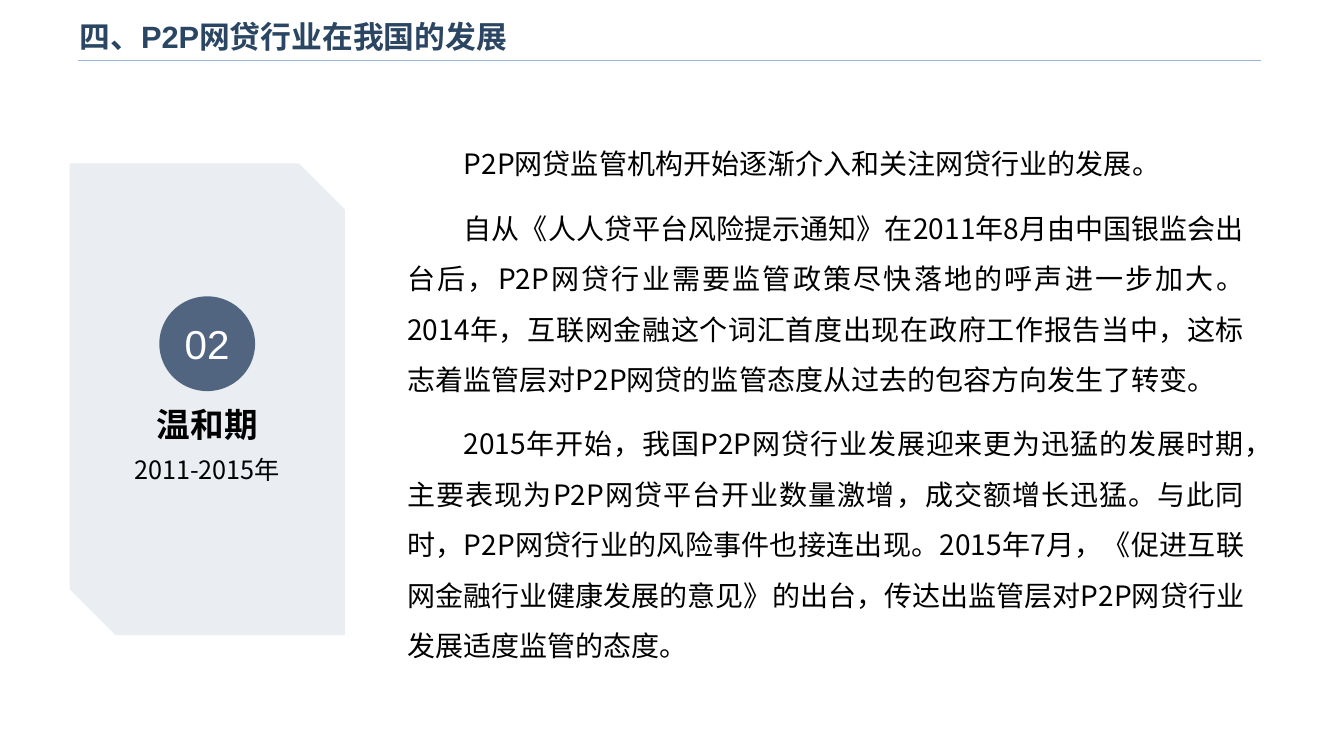
from lxml.etree import SubElement
from pptx import Presentation
from pptx.dml.color import RGBColor
from pptx.enum.lang import MSO_LANGUAGE_ID as Language
from pptx.enum.shapes import MSO_CONNECTOR as Connector, MSO_SHAPE as Shape
from pptx.enum.text import MSO_ANCHOR as Anchor, MSO_AUTO_SIZE as AutoSize, PP_ALIGN as Align
from pptx.oxml.ns import qn
from pptx.util import Inches, Pt

NAVY = RGBColor(0x2B, 0x46, 0x63)
SLATE = RGBColor(0x52, 0x65, 0x80)
RULE_BLUE = RGBColor(0x98, 0xB4, 0xD2)
PALE = RGBColor(0xEA, 0xEE, 0xF2)
BLACK = RGBColor(0, 0, 0)
WHITE = RGBColor(0xFF, 0xFF, 0xFF)
CJK = "Noto Sans CJK SC"


def write(para, text, size, font=CJK, color=BLACK, bold=False, align=Align.CENTER):
    para.alignment = align
    span = para.add_run()
    span.text = text
    span.font.size = Pt(size)
    span.font.name = font
    span.font.bold = bold
    span.font.color.rgb = color
    span.font.language_id = Language.SIMPLIFIED_CHINESE
    SubElement(span.font._element, qn("a:ea")).set("typeface", CJK)


deck = Presentation()
deck.slide_width = Inches(13.33)
deck.slide_height = Inches(7.5)
page = deck.slides.add_slide(deck.slide_layouts[1])

rule = page.shapes.add_connector(Connector.STRAIGHT, Inches(0.77), Inches(0.6), Inches(12.51), Inches(0.6))
rule.line.color.rgb = RULE_BLUE
rule.line.width = Pt(1)
SubElement(rule._element.spPr, qn("a:effectLst"))

title = page.shapes.title
title.left, title.top, title.width, title.height = map(Inches, (0.69, 0.09, 10.71, 0.53))
title.text_frame.auto_size = AutoSize.NONE
title.text_frame.vertical_anchor = Anchor.MIDDLE
write(title.text_frame.paragraphs[0], "四、P2P网贷行业在我国的发展", 22,
      font="Arial", color=NAVY, bold=True, align=Align.LEFT)

card = page.shapes.add_shape(Shape.SNIP_2_DIAG_RECTANGLE, Inches(0.69), Inches(1.62), Inches(2.73), Inches(4.68))
badge = page.shapes.add_shape(Shape.OVAL, Inches(1.58), Inches(2.94), Inches(0.95), Inches(0.94))
for shape, fill in ((card, PALE), (badge, SLATE)):
    shape.shadow.inherit = False
    shape.fill.solid()
    shape.fill.fore_color.rgb = fill
    shape.line.fill.background()
badge.text_frame.vertical_anchor = Anchor.MIDDLE
write(badge.text_frame.paragraphs[0], "02", 28.8, font="Arial", color=WHITE)

for text, top, height, size, bold in (
    ("温和期", 3.96, 0.5, 24, True),
    ("2011-2015年", 4.46, 0.4, 18, False),
):
    box = page.shapes.add_textbox(Inches(0.46), Inches(top), Inches(3.19), Inches(height))
    box.text_frame.word_wrap = True
    write(box.text_frame.paragraphs[0], text, size, bold=bold)

body = page.placeholders[1]
body.left, body.top, body.width, body.height = map(Inches, (3.94, 1.24, 8.5, 5.43))
frame = body.text_frame
frame.auto_size = AutoSize.NONE
frame.vertical_anchor = Anchor.TOP
history = (
    "P2P网贷监管机构开始逐渐介入和关注网贷行业的发展。",
    "自从《人人贷平台风险提示通知》在2011年8月由中国银监会出台后，P2P网贷行业需要监管政策尽快落地的呼声进一步加大。"
    "2014年，互联网金融这个词汇首度出现在政府工作报告当中，这标志着监管层对P2P网贷的监管态度从过去的包容方向发生了转变。",
    "2015年开始，我国P2P网贷行业发展迎来更为迅猛的发展时期，主要表现为P2P网贷平台开业数量激增，成交额增长迅猛。"
    "与此同时，P2P网贷行业的风险事件也接连出现。2015年7月，《促进互联网金融行业健康发展的意见》的出台，"
    "传达出监管层对P2P网贷行业发展适度监管的态度。",
)
for index, text in enumerate(history):
    para = frame.add_paragraph() if index else frame.paragraphs[0]
    layout = para._p.get_or_add_pPr()
    layout.set("marL", "0")
    layout.set("indent", str(Inches(0.56)))
    layout.set("hangingPunct", "1")
    SubElement(layout, qn("a:buNone"))
    para.line_spacing = 1.5
    para.space_before = Pt(0)
    para.space_after = Pt(10)
    write(para, text, 20, align=Align.JUSTIFY)

deck.save("out.pptx")
